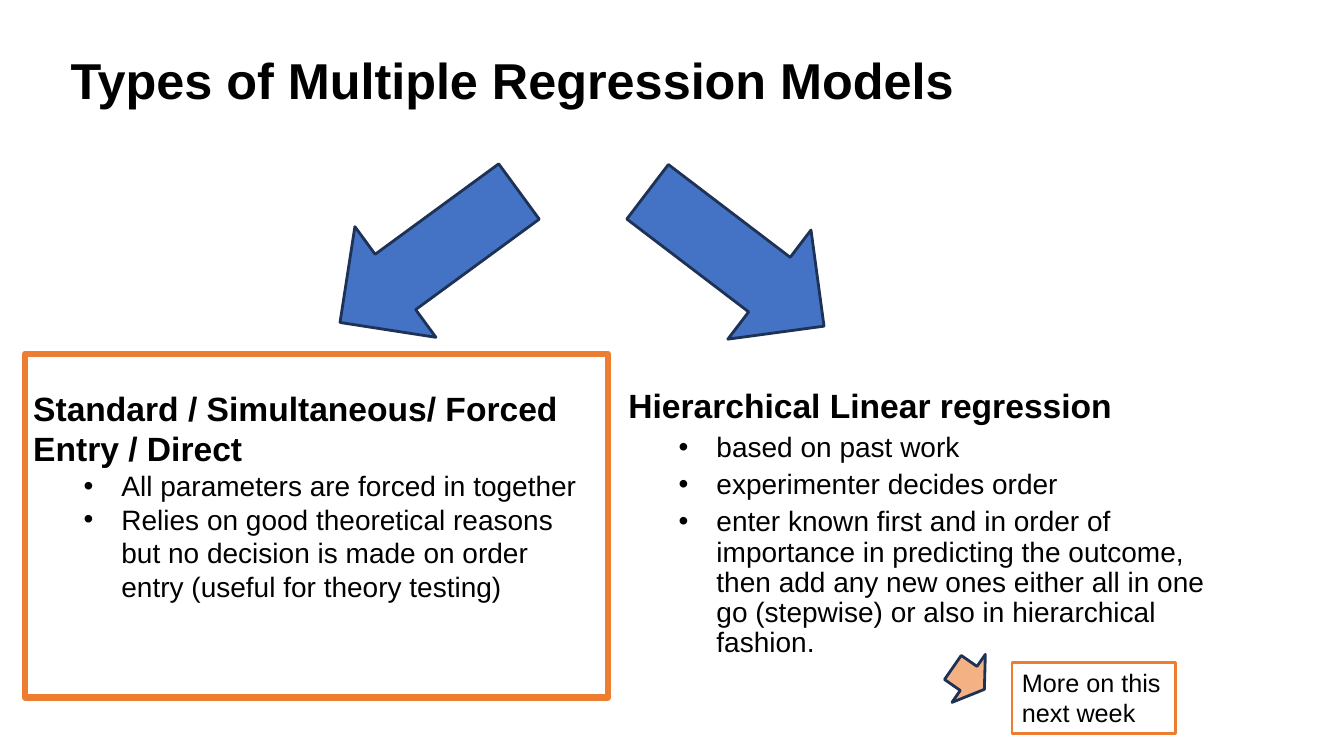
from lxml import etree
from pptx import Presentation
from pptx.dml.color import RGBColor
from pptx.enum import shapes, text
from pptx.oxml import ns
from pptx.util import Pt

BLACK, WHITE, BLUE, NAVY = "000000", "FFFFFF", "4472C4", "1E3256"
ORANGE, PEACH = "ED7D31", "F4B183"
SHAPE = shapes.MSO_SHAPE


def colour(hex_code):
    return RGBColor.from_string(hex_code)


def write(paragraph, content, size=20, bold=False, spacing=1.0, before=0,
          margin=0, hanging=0, bullet=False):
    """Fill one paragraph; margin and hanging are lengths in points."""
    properties = paragraph._p.get_or_add_pPr()
    properties.set("marL", str(Pt(margin)))
    properties.set("indent", str(-Pt(hanging)))
    paragraph.line_spacing = spacing
    paragraph.space_before = Pt(before)
    if bullet:
        paragraph.level = 1
        etree.SubElement(properties, ns.qn("a:buFont"), typeface="Arial")
        etree.SubElement(properties, ns.qn("a:buChar"), char="•")
    run = paragraph.add_run()
    run.text = content
    run.font.name = "Arial"
    run.font.size = Pt(size)
    run.font.bold = bold
    run.font.color.rgb = colour(BLACK)


class RegressionSlide:
    def __init__(self, deck):
        self.slide = deck.slides.add_slide(deck.slide_layouts[5])

    def title(self, content, left, top, width, height):
        title = self.slide.shapes.title
        title.left, title.top = Pt(left), Pt(top)
        title.width, title.height = Pt(width), Pt(height)
        frame = title.text_frame
        frame.word_wrap = True
        frame.vertical_anchor = text.MSO_ANCHOR.MIDDLE
        frame.paragraphs[0].alignment = text.PP_ALIGN.LEFT
        write(frame.paragraphs[0], content, size=36, bold=True, spacing=0.9)

    def model(self, heading, points, left, top, width, height, heading_margin=0,
              point_margin=63, spacing=1.0, before=0):
        """Add a bold heading with bullet points below it."""
        box = self.slide.shapes.add_textbox(Pt(left), Pt(top), Pt(width), Pt(height))
        frame = box.text_frame
        frame.word_wrap = True
        write(frame.paragraphs[0], heading, size=24, bold=True, spacing=spacing,
              margin=heading_margin)
        for point in points:
            write(frame.add_paragraph(), point, spacing=spacing, before=before,
                  margin=point_margin, hanging=27, bullet=True)

    def shape(self, kind, left, top, width, height, line, weight=2, fill=None, rotation=0):
        shape = self.slide.shapes.add_shape(kind, Pt(left), Pt(top), Pt(width), Pt(height))
        shape.shadow.inherit = False
        shape.rotation = rotation
        shape.line.color.rgb = colour(line)
        shape.line.width = Pt(weight)
        if fill:
            shape.fill.solid()
            shape.fill.fore_color.rgb = colour(fill)
        else:
            shape.fill.background()
        return shape

    def arrow(self, left, top, width, height, rotation, fill=BLUE):
        self.shape(SHAPE.DOWN_ARROW, left, top, width, height, NAVY,
                   fill=fill, rotation=rotation)

    def note(self, content, left, top, width, height):
        note = self.shape(SHAPE.RECTANGLE, left, top, width, height, ORANGE, fill=WHITE)
        frame = note.text_frame
        frame.word_wrap = True
        frame.vertical_anchor = text.MSO_ANCHOR.TOP
        frame.paragraphs[0].alignment = text.PP_ALIGN.LEFT
        write(frame.paragraphs[0], content, size=18)


def main():
    deck = Presentation()
    deck.slide_width, deck.slide_height = Pt(960), Pt(540)
    page = RegressionSlide(deck)
    page.title("Types of Multiple Regression Models", 43.2, 23, 812, 73.4)
    page.model(
        "Hierarchical Linear regression",
        ["based on past work",
         "experimenter decides order",
         "enter known first and in order of importance in predicting the outcome, "
         "then add any new ones either all in one go (stepwise) or also in "
         "hierarchical fashion."],
        432.7, 275, 441.4, 265, heading_margin=9, point_margin=72, spacing=0.9, before=5)
    page.arrow(257.8, 104.4, 98, 158.4, 53.8)
    page.arrow(476.6, 105.8, 98, 158.4, 307.3)
    page.model(
        "Standard / Simultaneous/ Forced Entry / Direct",
        ["All parameters are forced in together",
         "Relies on good theoretical reasons but no decision is made on order "
         "entry (useful for theory testing)"],
        16.6, 273.6, 416.2, 162.7)
    page.shape(SHAPE.RECTANGLE, 18, 252.7, 416.2, 245.5, ORANGE, weight=4.5)
    page.note("More on this next week", 722.9, 473, 116.6, 51.1)
    page.arrow(671, 470.9, 41.8, 27.4, 304.8, fill=PEACH)
    deck.save("out.pptx")


if __name__ == "__main__":
    main()
